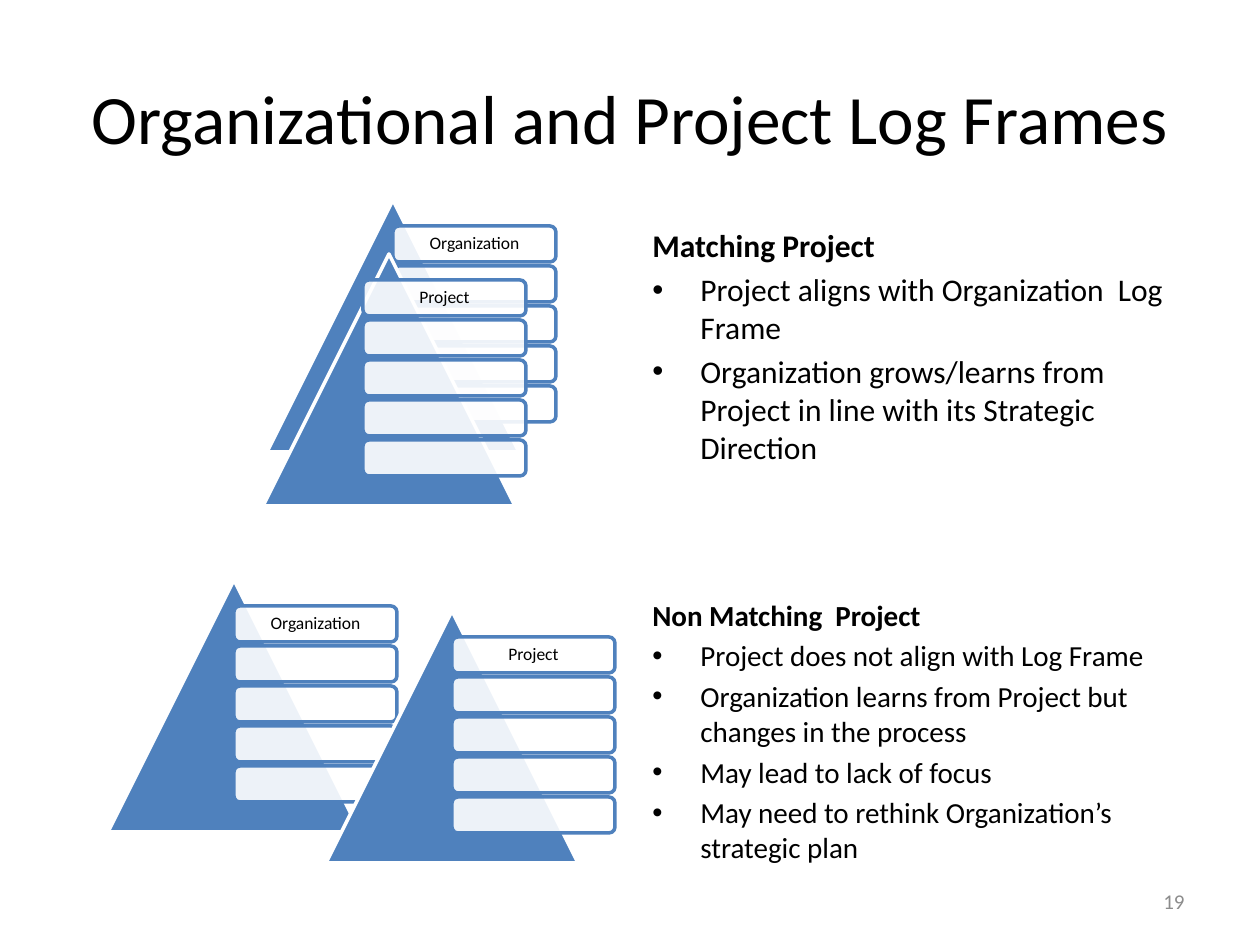
"""Build the slide comparing organizational and project log frames."""
from lxml import etree
from pptx import Presentation
from pptx.dml.color import RGBColor
from pptx.enum.shapes import MSO_SHAPE
from pptx.enum.text import MSO_ANCHOR, PP_ALIGN
from pptx.oxml.ns import qn
from pptx.util import Pt

PX = 914400 / 126
BLACK = RGBColor(0x00, 0x00, 0x00)
WHITE = RGBColor(0xFF, 0xFF, 0xFF)
BLUE = RGBColor(0x4F, 0x81, 0xBD)
GRAY = RGBColor(0x8C, 0x8C, 0x8C)
TRIANGLE, BAR = MSO_SHAPE.ISOSCELES_TRIANGLE, MSO_SHAPE.ROUNDED_RECTANGLE
LEFT, CENTER, RIGHT = PP_ALIGN.LEFT, PP_ALIGN.CENTER, PP_ALIGN.RIGHT
TOP, MIDDLE = MSO_ANCHOR.TOP, MSO_ANCHOR.MIDDLE
BARS, BAR_STEP = 5, 40


def px(*lengths):
    return [int(n * PX) for n in lengths]


def add_run(p, text, size, color=BLACK, bold=False):
    r = p.add_run()
    r.text = text
    r.font.name = "Calibri"
    r.font.size = Pt(size)
    r.font.color.rgb = color
    r.font.bold = bold


prs = Presentation()
prs.slide_width, prs.slide_height = px(1260, 945)
s = prs.slides.add_slide(prs.slide_layouts[6])

text_boxes = [
    ((63, 38, 1134, 157), MIDDLE, CENTER, 39.6, BLACK, False,
     "Organizational and Project Log Frames", []),
    ((640, 220, 557, 291), TOP, LEFT, 18, BLACK, True, "Matching Project",
     ["Project aligns with Organization  Log Frame",
      "Organization grows/learns from Project in line with its Strategic Direction"]),
    ((903, 876, 294, 50), MIDDLE, RIGHT, 12, GRAY, False, "19", []),
    ((640, 591, 557, 258), TOP, LEFT, 16.6, BLACK, True, "Non Matching  Project",
     ["Project does not align with Log Frame",
      "Organization learns from Project but changes in the process",
      "May lead to lack of focus",
      "May need to rethink Organization’s strategic plan"]),
]
for box, anchor, align, size, color, bold, heading, bullets in text_boxes:
    tf = s.shapes.add_textbox(*px(*box)).text_frame
    tf.word_wrap = True
    tf.vertical_anchor = anchor
    p = tf.paragraphs[0]
    p.alignment = align
    add_run(p, heading, size, color, bold)
    if bullets:
        p.space_before = Pt(size / 5)
    for bullet in bullets:
        p = tf.add_paragraph()
        p.space_before = Pt(size / 5)
        indent = px(48)[0]
        pPr = p._p.get_or_add_pPr()
        pPr.set("marL", str(indent))
        pPr.set("indent", str(-indent))
        etree.SubElement(pPr, qn("a:buFont")).set("typeface", "Arial")
        etree.SubElement(pPr, qn("a:buChar")).set("char", "•")
        add_run(p, bullet, size, color)

pyramids = [
    (267, 200, 126, "Organization"),
    (263, 254, 100, "Project"),
    (108, 580, 126, "Organization"),
    (326, 611, 126, "Project"),
]
for x, y, bar_dx, label in pyramids:
    group = s.shapes.add_group_shape()
    sp = group.shapes.add_shape(TRIANGLE, *px(x, y, 252, 252))
    sp.shadow.inherit = False
    sp.fill.solid()
    sp.fill.fore_color.rgb = BLUE
    sp.line.color.rgb = WHITE
    sp.line.width = Pt(2)
    for i in range(BARS):
        sp = group.shapes.add_shape(BAR, *px(x + bar_dx, y + 26 + i * BAR_STEP, 163, 36))
        sp.shadow.inherit = False
        sp.fill.solid()
        sp.fill.fore_color.rgb = WHITE
        color = sp.fill._xPr.find(qn("a:solidFill"))[0]
        etree.SubElement(color, qn("a:alpha")).set("val", "90000")
        sp.line.color.rgb = BLUE
        sp.line.width = Pt(2)
        if i == 0:
            tf = sp.text_frame
            tf.word_wrap = True
            tf.vertical_anchor = MIDDLE
            tf.margin_left, tf.margin_top, tf.margin_right, tf.margin_bottom = px(5, 5, 5, 5)
            p = tf.paragraphs[0]
            p.alignment = CENTER
            p.line_spacing = 0.9
            add_run(p, label, 10)

prs.save("out.pptx")
